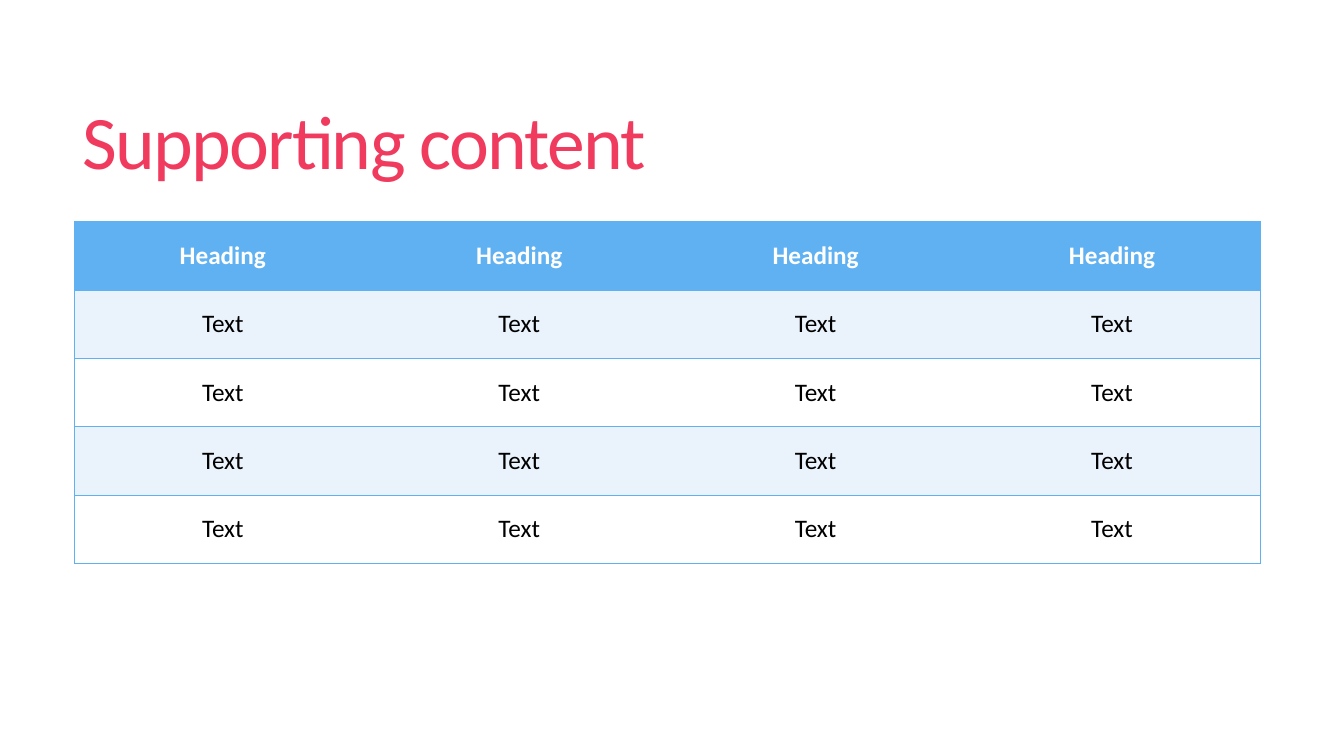
from lxml.etree import SubElement
from pptx import Presentation
from pptx.dml.color import RGBColor
from pptx.enum.text import MSO_ANCHOR, PP_ALIGN
from pptx.oxml.ns import qn
from pptx.util import Inches, Pt

PINK, BLUE, PALE, WHITE, BLACK = "F03B5E", "60B1F2", "EAF2FC", "FFFFFF", "000000"


def color(hex_value):
    return RGBColor.from_string(hex_value)


class SlideBuilder:
    font_name = "Calibri"

    def __init__(self, page):
        self.page = page

    def style_text(self, para, size, ink, bold=False):
        for span in para.runs:
            span.font.name = self.font_name
            span.font.size = Pt(size)
            span.font.bold = bold
            span.font.color.rgb = color(ink)

    def title(self, text, left, top, width, height):
        box = self.page.shapes.add_textbox(
            Inches(left), Inches(top), Inches(width), Inches(height))
        frame = box.text_frame
        frame.text = text
        frame.word_wrap = True
        frame.vertical_anchor = MSO_ANCHOR.MIDDLE
        para = frame.paragraphs[0]
        para.line_spacing = 0.85
        self.style_text(para, 54, PINK)
        # Tighten the letters by 1.2 points
        para.runs[0]._r.get_or_add_rPr().set("spc", "-120")

    def border(self, cell, side, ink=None):
        line = SubElement(cell._tc.get_or_add_tcPr(), qn(f"a:ln{side}"), w=str(Pt(1)))
        if ink:
            fill = SubElement(line, qn("a:solidFill"))
            SubElement(fill, qn("a:srgbClr"), val=ink)
        else:
            SubElement(line, qn("a:noFill"))

    def table(self, rows, left, top, width, height):
        last = len(rows[0]) - 1
        frame = self.page.shapes.add_table(
            len(rows), len(rows[0]),
            Inches(left), Inches(top), Inches(width), Inches(height))
        for r, row in enumerate(rows):
            heading = r == 0
            background = BLUE if heading else PALE if r % 2 else WHITE
            for c, text in enumerate(row):
                cell = frame.table.cell(r, c)
                cell.text = text
                cell.vertical_anchor = MSO_ANCHOR.MIDDLE
                para = cell.text_frame.paragraphs[0]
                para.alignment = PP_ALIGN.CENTER
                self.style_text(para, 18, WHITE if heading else BLACK, heading)
                # Horizontal rules everywhere, vertical ones only outside
                self.border(cell, "L", BLUE if c == 0 else None)
                self.border(cell, "R", BLUE if c == last else None)
                self.border(cell, "T", BLUE)
                self.border(cell, "B", BLUE)
                cell.fill.solid()
                cell.fill.fore_color.rgb = color(background)


def main():
    deck = Presentation()
    deck.slide_width, deck.slide_height = Inches(13.33), Inches(7.5)
    slide = SlideBuilder(deck.slides.add_slide(deck.slide_layouts[6]))

    # Title
    slide.title("Supporting content", 0.72, 0.55, 11.78, 1.81)

    # Table: one heading row and four text rows
    slide.table([["Heading"] * 4] + [["Text"] * 4] * 4, 0.74, 2.2, 11.76, 3.39)

    deck.save("out.pptx")


if __name__ == "__main__":
    main()
